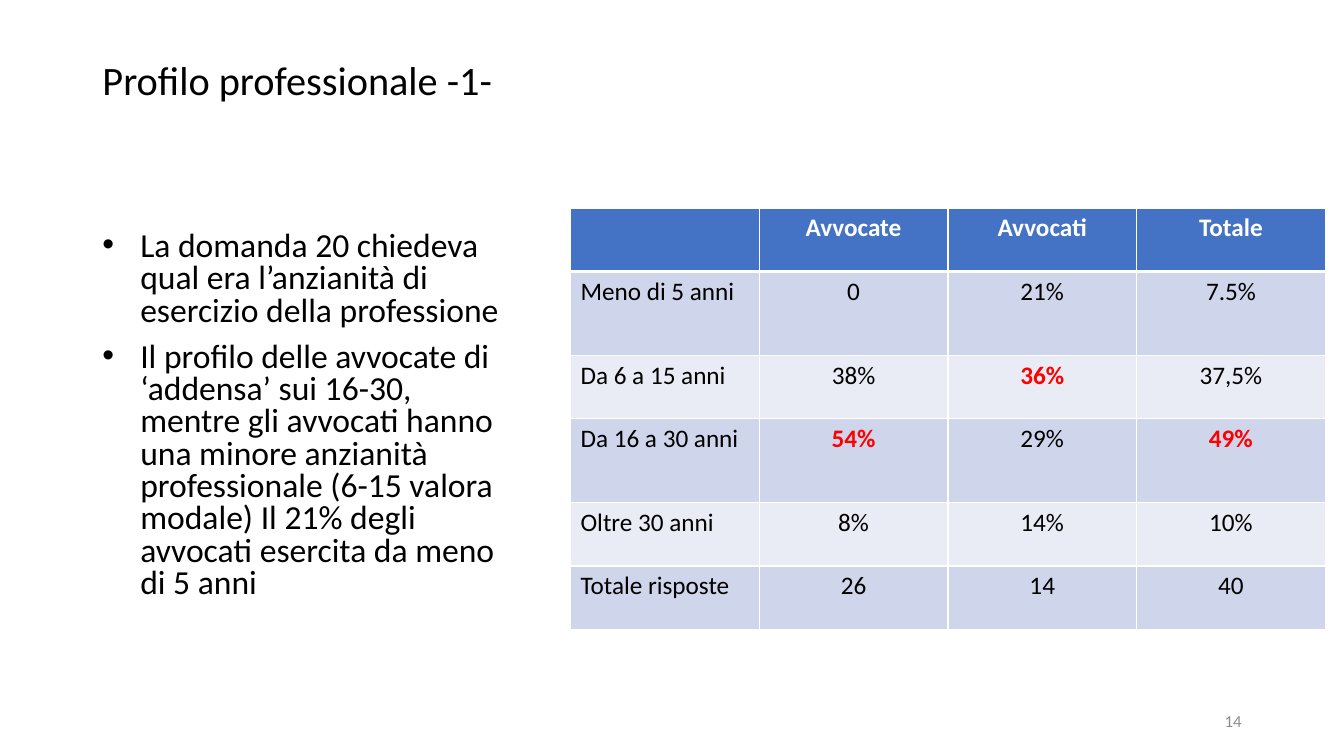
from dataclasses import dataclass
from typing import Any

from lxml.etree import SubElement
from pptx import Presentation
from pptx.dml.color import RGBColor
from pptx.enum.text import MSO_ANCHOR, MSO_AUTO_SIZE, PP_ALIGN
from pptx.oxml.ns import qn
from pptx.util import Pt

BLACK = RGBColor(0x00, 0x00, 0x00)
WHITE = RGBColor(0xFF, 0xFF, 0xFF)
RED = RGBColor(0xFF, 0x00, 0x00)
GREY = RGBColor(0x8C, 0x8C, 0x8C)
HEADER_BLUE = RGBColor(0x44, 0x72, 0xC4)
BANDS = (RGBColor(0xE9, 0xEB, 0xF5), RGBColor(0xCF, 0xD5, 0xEA))
FONT = "Calibri"
COLUMN_WIDTH = 134.8
LEFT_MARGIN = 66
LEFT_WIDTH = 309.6
BULLET_INDENT = Pt(27)


@dataclass
class SeniorityRow:
    texts: tuple[str, ...]
    height: float = 45.4
    modal_columns: tuple[int, ...] = ()  # columns shown in bold red


SENIORITY = [
    SeniorityRow(("", "Avvocate", "Avvocati", "Totale")),
    SeniorityRow(("Meno di 5 anni", "0", "21%", "7.5%"), 59.8),
    SeniorityRow(("Da 6 a 15 anni", "38%", "36%", "37,5%"), modal_columns=(2,)),
    SeniorityRow(("Da 16 a 30 anni", "54%", "29%", "49%"), 59.8, (1, 3)),
    SeniorityRow(("Oltre 30 anni", "8%", "14%", "10%")),
    SeniorityRow(("Totale risposte", "26", "14", "40")),
]
FINDINGS = [
    "La domanda 20 chiedeva qual era l’anzianità di esercizio della professione",
    "Il profilo delle avvocate di ‘addensa’ sui 16-30, mentre gli avvocati hanno "
    "una minore anzianità professionale (6-15 valora modale) Il 21% degli "
    "avvocati esercita da meno di 5 anni",
]


def apply(target: Any, formats: dict[str, Any]) -> None:
    for name, value in formats.items():
        setattr(target, name, value)


def place(shape: Any, left: float, top: float, width: float, height: float) -> None:
    apply(shape, {"left": Pt(left), "top": Pt(top),
                  "width": Pt(width), "height": Pt(height)})


def write(paragraph: Any, text: str, size: float, color: RGBColor,
          bold: bool = False, **formats: Any) -> None:
    run = paragraph.add_run()
    run.text = text
    apply(run.font, {"name": FONT, "size": Pt(size), "bold": bold})
    run.font.color.rgb = color
    apply(paragraph, formats)


def add_borders(cell: Any, bottom_width: float) -> None:
    widths = {"a:lnL": 1, "a:lnR": 1, "a:lnT": 1, "a:lnB": bottom_width}
    for tag, width in widths.items():
        line = SubElement(cell._tc.get_or_add_tcPr(), qn(tag), w=str(Pt(width)))
        fill = SubElement(line, qn("a:solidFill"))
        SubElement(fill, qn("a:srgbClr"), val=str(WHITE))


def add_seniority_table(slide: Any, left: float, top: float) -> None:
    columns = len(SENIORITY[0].texts)
    height = sum(row.height for row in SENIORITY)
    table = slide.shapes.add_table(len(SENIORITY), columns, Pt(left), Pt(top),
                                   Pt(COLUMN_WIDTH * columns), Pt(height)).table
    for column in table.columns:
        column.width = Pt(COLUMN_WIDTH)
    for r, row in enumerate(SENIORITY):
        table.rows[r].height = Pt(row.height)
        header = r == 0
        for c, text in enumerate(row.texts):
            cell = table.cell(r, c)
            add_borders(cell, 3 if header else 1)
            cell.fill.solid()
            cell.fill.fore_color.rgb = HEADER_BLUE if header else BANDS[r % 2]
            if text:
                modal = c in row.modal_columns
                color = WHITE if header else RED if modal else BLACK
                write(cell.text_frame.paragraphs[0], text, 18, color, header or modal,
                      alignment=PP_ALIGN.CENTER if c else PP_ALIGN.LEFT)


def main() -> None:
    deck = Presentation()
    apply(deck, {"slide_width": Pt(960), "slide_height": Pt(540)})
    slide = deck.slides.add_slide(deck.slide_layouts[1])
    frame_formats = {"word_wrap": True, "auto_size": MSO_AUTO_SIZE.NONE}

    # Title
    title = slide.shapes.title
    place(title, LEFT_MARGIN, 36, LEFT_WIDTH, 41.8)
    apply(title.text_frame, frame_formats | {"vertical_anchor": MSO_ANCHOR.BOTTOM})
    write(title.text_frame.paragraphs[0], "Profilo professionale -1-", 28.8, BLACK,
          alignment=PP_ALIGN.LEFT, line_spacing=0.9)

    # Seniority by gender
    add_seniority_table(slide, 407.5, 148.5)

    # Findings
    findings = slide.placeholders[1]
    place(findings, LEFT_MARGIN, 162, LEFT_WIDTH, 300)
    apply(findings.text_frame, frame_formats | {"vertical_anchor": MSO_ANCHOR.TOP})
    for i, finding in enumerate(FINDINGS):
        frame = findings.text_frame
        paragraph = frame.add_paragraph() if i else frame.paragraphs[0]
        write(paragraph, finding, 24, BLACK, alignment=PP_ALIGN.LEFT,
              line_spacing=0.8, space_before=Pt(10))
        properties = paragraph._p.get_or_add_pPr()
        properties.set("marL", str(BULLET_INDENT))
        properties.set("indent", str(-BULLET_INDENT))

    # Page number
    page_number = slide.shapes.add_textbox(Pt(678), Pt(500.5), Pt(216), Pt(28.8))
    apply(page_number.text_frame, frame_formats | {"vertical_anchor": MSO_ANCHOR.MIDDLE})
    write(page_number.text_frame.paragraphs[0], "14", 12, GREY,
          alignment=PP_ALIGN.RIGHT)

    deck.save("out.pptx")


if __name__ == "__main__":
    main()
